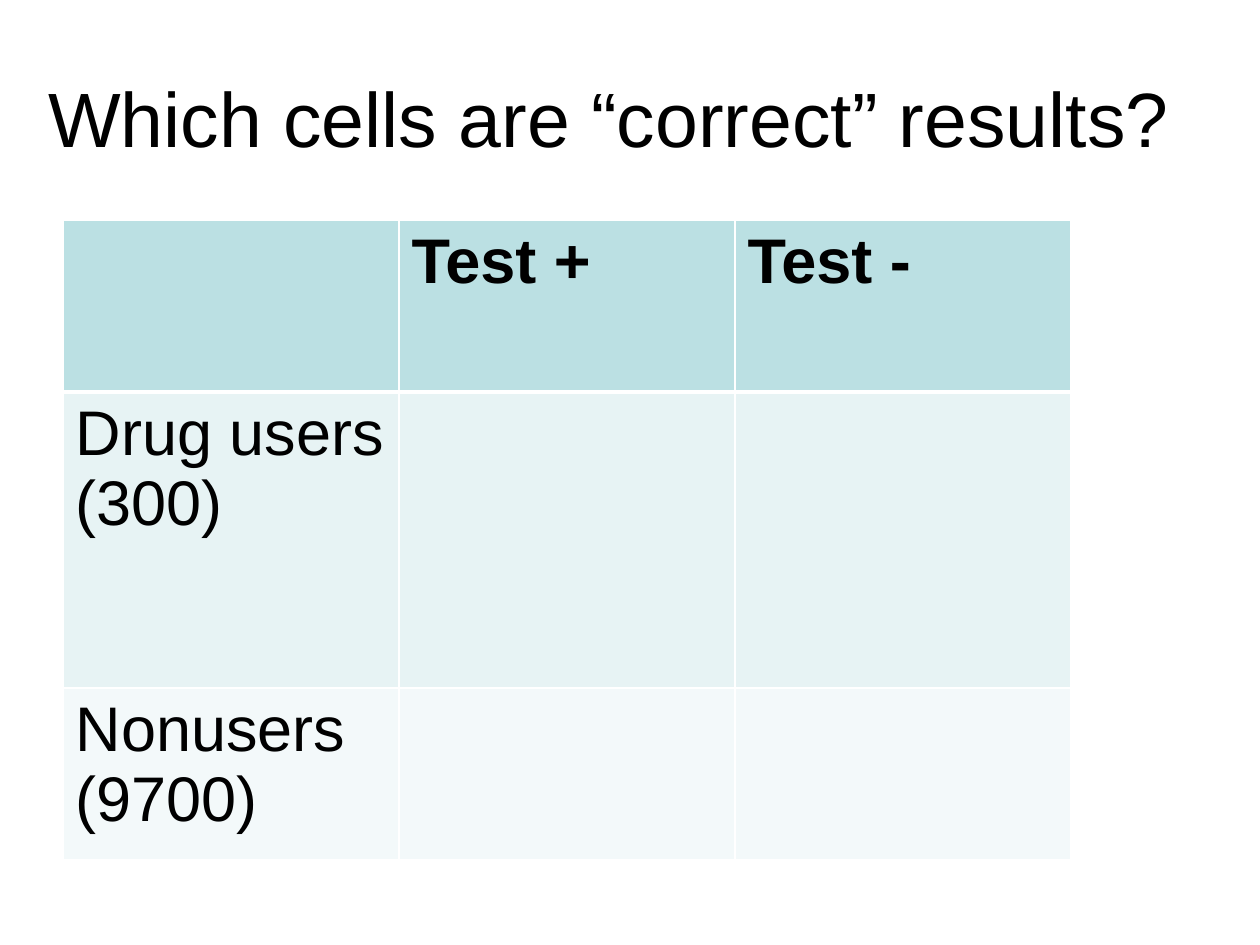
from pptx import Presentation
from pptx import util as u
from pptx.dml.color import RGBColor
from pptx.enum import text
from pptx.oxml.ns import qn
from lxml import etree

ROWS = [
    ("BBE0E3", 1.36, ["", "Test +", "Test -"]),
    ("E7F3F4", 2.35, ["Drug users (300)", "", ""]),
    ("F3F9FA", 1.36, ["Nonusers (9700)", "", ""]),
]


def color(value):
    """Return the colour for a hex string."""
    return RGBColor.from_string(value)


def write(tf, words, size, bold=False, align=text.PP_ALIGN.LEFT):
    """Put one formatted run into a text frame."""
    p = tf.paragraphs[0]
    p.alignment = align
    r = p.add_run()
    r.text = words
    r.font.name = "Arial"
    r.font.size = u.Pt(size)
    r.font.bold = bold
    r.font.color.rgb = color("000000")


def set_border(cell, side, points):
    """Draw a white border on one side of a cell."""
    ln = etree.SubElement(cell._tc.get_or_add_tcPr(), qn(f"a:ln{side}"), w=str(u.Pt(points)))
    fill = etree.SubElement(ln, qn("a:solidFill"))
    etree.SubElement(fill, qn("a:srgbClr"), val="FFFFFF")


def add_title(s, words):
    """Place and fill the title placeholder."""
    sp = s.shapes.title
    sp.left, sp.top = u.Inches(0.17), u.Inches(0.3)
    sp.width, sp.height = u.Inches(9.33), u.Inches(1.25)
    tf = sp.text_frame
    tf.word_wrap = True
    tf.vertical_anchor = text.MSO_ANCHOR.MIDDLE
    write(tf, words, 44, align=text.PP_ALIGN.CENTER)


def add_results_table(s):
    """Add the table of test results by group."""
    height = sum(row[1] for row in ROWS)
    table = s.shapes.add_table(
        len(ROWS), 3, u.Inches(0.5), u.Inches(1.75), u.Inches(8), u.Inches(height)
    ).table
    for i, (fill, row_height, words) in enumerate(ROWS):
        table.rows[i].height = u.Inches(row_height)
        for j, word in enumerate(words):
            cell = table.cell(i, j)
            widths = {"L": 1, "R": 1, "T": 3 if i == 1 else 1, "B": 3 if i == 0 else 1}
            for side, points in widths.items():
                set_border(cell, side, points)
            cell.fill.solid()
            cell.fill.fore_color.rgb = color(fill)
            if word:
                write(cell.text_frame, word, 36, bold=i == 0)


def main():
    """Build and save the slide."""
    prs = Presentation()
    prs.slide_width, prs.slide_height = u.Inches(10), u.Inches(7.5)
    s = prs.slides.add_slide(prs.slide_layouts[5])
    add_title(s, "Which cells are “correct” results?")
    add_results_table(s)
    prs.save("out.pptx")


if __name__ == "__main__":
    main()
